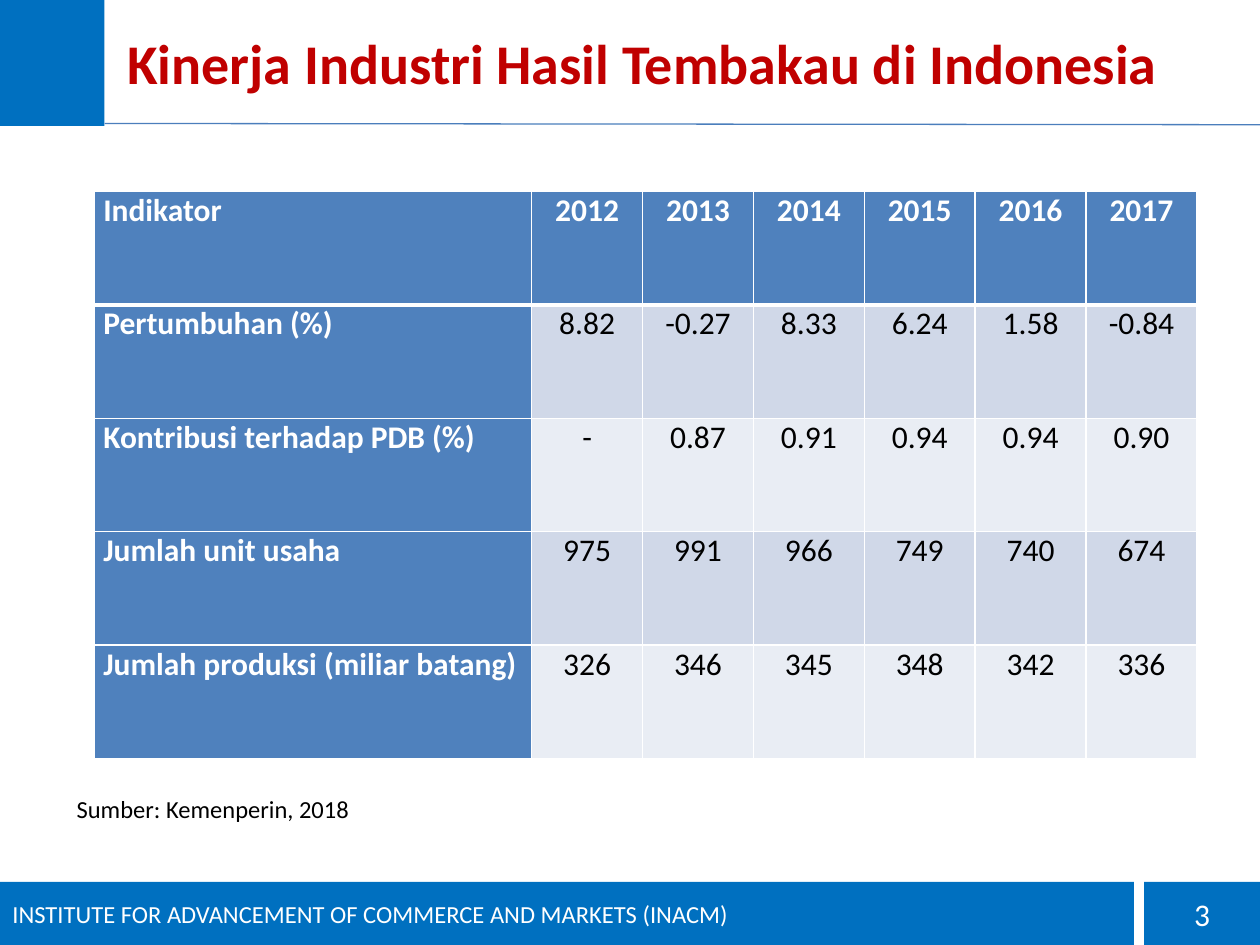
from dataclasses import dataclass

from lxml.etree import SubElement
from pptx import Presentation
from pptx.dml.color import RGBColor
from pptx.enum.shapes import MSO_CONNECTOR, MSO_SHAPE
from pptx.enum.text import MSO_ANCHOR, PP_ALIGN
from pptx.oxml.ns import qn
from pptx.util import Inches, Pt

FONT = "Calibri"
WHITE, BLACK, RED = "FFFFFF", "000000", "C00000"
BLUE, HEADER_BLUE, RULE_BLUE = "0070C0", "4F81BD", "4B7EBC"
BANDS = ("D0D8E8", "E9EDF4")


@dataclass
class Block:
    left: float
    top: float
    width: float
    height: float
    text: str = ""
    size: int = 14
    align: PP_ALIGN = PP_ALIGN.LEFT


BLOCKS = [
    Block(0, 0, 0.83, 1),
    Block(0, 7, 9, 0.5, "INSTITUTE FOR ADVANCEMENT OF COMMERCE AND MARKETS (INACM)"),
    Block(9.08, 7, 0.92, 0.5, "3", 18, PP_ALIGN.CENTER),
]

ROWS = [
    ("Indikator", "2012", "2013", "2014", "2015", "2016", "2017"),
    ("Pertumbuhan (%)", "8.82", "-0.27", "8.33", "6.24", "1.58", "-0.84"),
    ("Kontribusi terhadap PDB (%)", "-", "0.87", "0.91", "0.94", "0.94", "0.90"),
    ("Jumlah unit usaha", "975", "991", "966", "749", "740", "674"),
    ("Jumlah produksi (miliar batang)", "326", "346", "345", "348", "342", "336"),
]
LABEL_WIDTH, YEAR_WIDTH, ROW_HEIGHT = 3.47, 0.88, 0.9


def color(value: str) -> RGBColor:
    return RGBColor.from_string(value)


def write(frame, text: str, size: int, ink: str, bold: bool = False,
          align: PP_ALIGN = PP_ALIGN.LEFT) -> None:
    para = frame.paragraphs[0]
    para.alignment = align
    span = para.add_run()
    span.text = text
    span.font.name = FONT
    span.font.size = Pt(size)
    span.font.bold = bold
    span.font.color.rgb = color(ink)


def place(shape, left: float, top: float, width: float, height: float) -> None:
    shape.left, shape.top = Inches(left), Inches(top)
    shape.width, shape.height = Inches(width), Inches(height)


def add_block(page, block: Block) -> None:
    box = page.shapes.add_shape(
        MSO_SHAPE.RECTANGLE, Inches(block.left), Inches(block.top),
        Inches(block.width), Inches(block.height))
    box.shadow.inherit = False
    box.fill.solid()
    box.fill.fore_color.rgb = color(BLUE)
    box.line.fill.background()
    if block.text:
        box.text_frame.vertical_anchor = MSO_ANCHOR.MIDDLE
        write(box.text_frame, block.text, block.size, WHITE, align=block.align)


def set_borders(cell, bottom: float) -> None:
    properties = cell._tc.get_or_add_tcPr()
    widths = {"lnL": 1, "lnR": 1, "lnT": 1, "lnB": bottom}
    for index, (side, width) in enumerate(widths.items()):
        edge = SubElement(properties, qn(f"a:{side}"), w=str(Pt(width)))
        fill = SubElement(edge, qn("a:solidFill"))
        SubElement(fill, qn("a:srgbClr"), val=WHITE)
        properties.insert(index, edge)


def add_indicator_table(page) -> None:
    years = len(ROWS[0]) - 1
    table = page.shapes.add_table(
        len(ROWS), years + 1, Inches(0.75), Inches(1.52),
        Inches(LABEL_WIDTH + years * YEAR_WIDTH),
        Inches(len(ROWS) * ROW_HEIGHT)).table
    for index, column in enumerate(table.columns):
        column.width = Inches(YEAR_WIDTH if index else LABEL_WIDTH)
    for row, values in enumerate(ROWS):
        table.rows[row].height = Inches(ROW_HEIGHT)
        for column, value in enumerate(values):
            heading = row == 0 or column == 0
            cell = table.cell(row, column)
            cell.margin_left = cell.margin_right = Inches(0.07)
            cell.margin_top = cell.margin_bottom = 0
            cell.fill.solid()
            cell.fill.fore_color.rgb = color(
                HEADER_BLUE if heading else BANDS[(row - 1) % 2])
            write(cell.text_frame, value, 18, WHITE if heading else BLACK, heading,
                  PP_ALIGN.CENTER if column else PP_ALIGN.JUSTIFY)
            set_borders(cell, bottom=1 if row else 3)


def main() -> None:
    deck = Presentation()
    deck.slide_width, deck.slide_height = Inches(10), Inches(7.5)
    page = deck.slides.add_slide(deck.slide_layouts[5])

    # Title
    title = page.shapes.title
    place(title, 0.91, 0.18, 8.67, 0.64)
    title.text_frame.vertical_anchor = MSO_ANCHOR.TOP
    write(title.text_frame, "Kinerja Industri Hasil Tembakau di Indonesia",
          32, RED, bold=True)

    # Corner block and footer bars
    for block in BLOCKS:
        add_block(page, block)

    # Rule under the title
    rule = page.shapes.add_connector(
        MSO_CONNECTOR.STRAIGHT, Inches(0.83), Inches(0.98), Inches(10), Inches(0.99))
    rule.line.color.rgb = color(RULE_BLUE)
    rule.line.width = Pt(0.75)
    SubElement(rule._element.spPr, qn("a:effectLst"))

    add_indicator_table(page)

    # Source note
    note = page.shapes.add_textbox(
        Inches(0.51), Inches(6.25), Inches(7.74), Inches(0.34))
    note.text_frame.word_wrap = True
    note.text_frame.vertical_anchor = MSO_ANCHOR.MIDDLE
    write(note.text_frame, "Sumber: Kemenperin, 2018", 14, BLACK,
          align=PP_ALIGN.JUSTIFY)

    deck.save("out.pptx")


if __name__ == "__main__":
    main()
